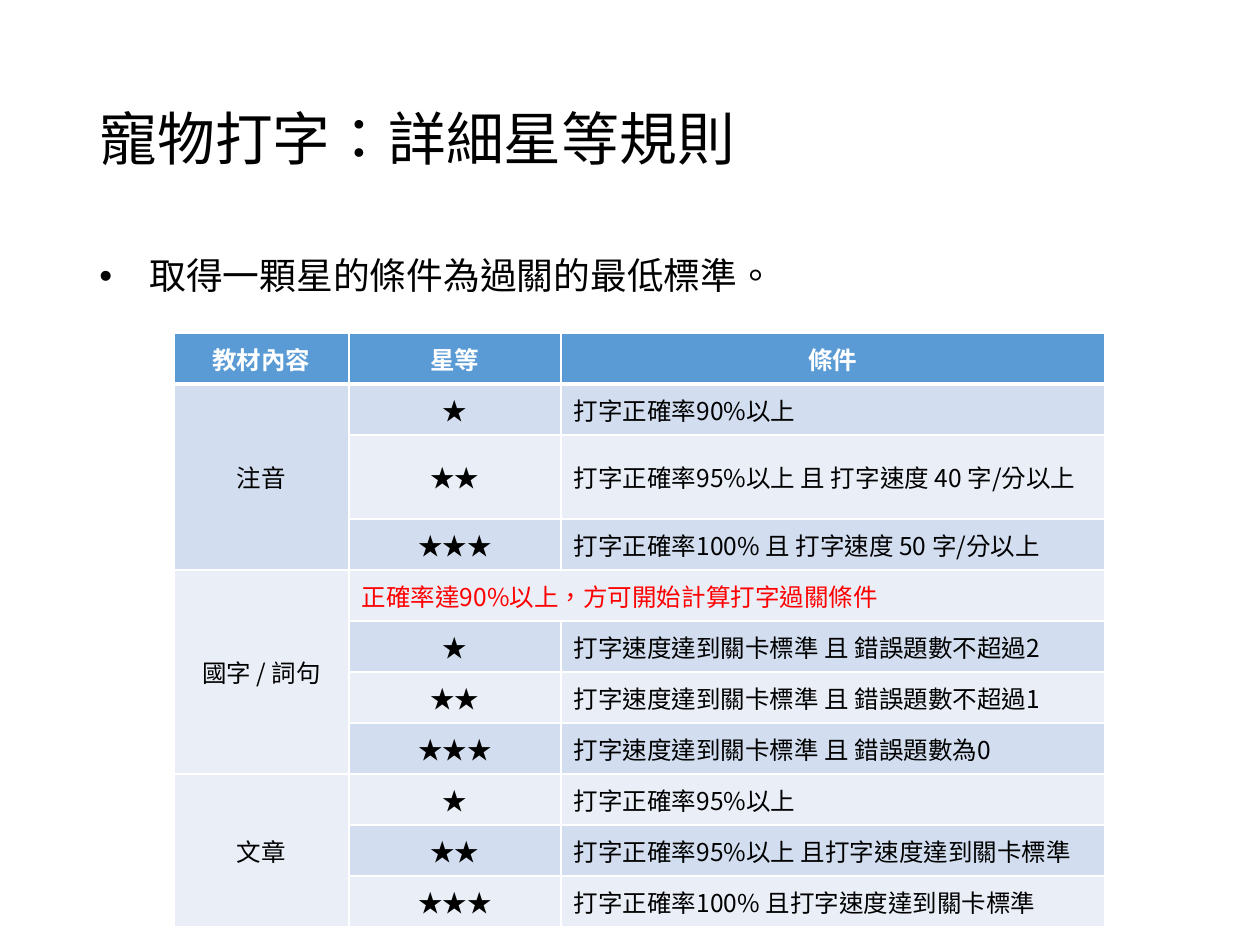
from pptx import Presentation
from pptx.dml.color import RGBColor
from pptx.enum.text import MSO_ANCHOR, MSO_AUTO_SIZE, PP_ALIGN
from pptx.oxml.ns import qn
from pptx.util import Pt
from lxml.etree import SubElement

FONT, LANGUAGE = "Noto Sans CJK SC", "zh-TW"
BLACK, WHITE, RED = "000000", "FFFFFF", "FF0000"
HEADER_FILL, BANDS = "5B9BD5", ("EAEFF7", "D2DEEF")

TITLE = "寵物打字：詳細星等規則"
BULLET = "取得一顆星的條件為過關的最低標準。"
HEADERS = ("教材內容", "星等", "條件")
# (material, note over the two right columns, conditions for one, two and three stars)
GROUPS = [
    ("注音", None, (
        "打字正確率90%以上",
        "打字正確率95%以上 且 打字速度 40 字/分以上",
        "打字正確率100% 且 打字速度 50 字/分以上")),
    ("國字 / 詞句", "正確率達90%以上，方可開始計算打字過關條件", (
        "打字速度達到關卡標準 且 錯誤題數不超過2",
        "打字速度達到關卡標準 且 錯誤題數不超過1",
        "打字速度達到關卡標準 且 錯誤題數為0")),
    ("文章", None, (
        "打字正確率95%以上",
        "打字正確率95%以上 且打字速度達到關卡標準",
        "打字正確率100% 且打字速度達到關卡標準")),
]

TITLE_BOX = (87, 50, 1086, 183)
BODY_BOX = (87, 252, 1086, 600)
TABLE_LEFT, TABLE_TOP = 174, 333
COLUMN_WIDTHS = (175, 212, 544)
ROW_HEIGHT, TWO_LINE_HEIGHT, TWO_LINE_ROW = 51, 84, 2
BULLET_INDENT = 50


def px(value):
    return round(value * 914400 / 126)


def color(hex_string):
    return RGBColor.from_string(hex_string)


def write(text_frame, text, size, hex_color=BLACK, align=PP_ALIGN.LEFT, bold=False):
    text_frame.text = text
    paragraph = text_frame.paragraphs[0]
    paragraph.alignment = align
    for run in paragraph.runs:
        font = run.font
        font.name, font.size, font.bold = FONT, Pt(size), bold
        font.color.rgb = color(hex_color)
        font._element.set("lang", LANGUAGE)
        SubElement(font._element, qn("a:ea"), typeface=FONT)
    return paragraph


def fill_cell(cell, text, hex_color=BLACK, align=PP_ALIGN.CENTER, bold=False):
    cell.vertical_anchor = MSO_ANCHOR.MIDDLE
    write(cell.text_frame, text, 14, hex_color, align, bold)


def underline_cell(cell, points):
    """Give the cell a white bottom border; borders must precede the fill."""
    properties = cell._tc.get_or_add_tcPr()
    line = SubElement(properties, qn("a:lnB"), w=str(Pt(points)))
    fill = SubElement(line, qn("a:solidFill"))
    SubElement(fill, qn("a:srgbClr"), val=WHITE)
    properties.insert(0, line)


def add_title(slide):
    title = slide.shapes.title
    title.left, title.top, title.width, title.height = map(px, TITLE_BOX)
    title.text_frame.auto_size = MSO_AUTO_SIZE.NONE
    title.text_frame.vertical_anchor = MSO_ANCHOR.MIDDLE
    write(title.text_frame, TITLE, 33).line_spacing = 0.9


def add_bullet(slide):
    text_frame = slide.shapes.add_textbox(*map(px, BODY_BOX)).text_frame
    text_frame.word_wrap = True
    paragraph = write(text_frame, BULLET, 21)
    paragraph.line_spacing = 0.9
    properties = paragraph._p.get_or_add_pPr()
    properties.set("marL", str(px(BULLET_INDENT)))
    properties.set("indent", str(-px(BULLET_INDENT)))
    SubElement(properties, qn("a:buFont"), typeface="Arial")
    SubElement(properties, qn("a:buChar"), char="•")


def add_rules_table(slide):
    row_count = 1 + sum(len(rules) + bool(note) for _, note, rules in GROUPS)
    heights = [ROW_HEIGHT] * row_count
    heights[TWO_LINE_ROW] = TWO_LINE_HEIGHT
    table = slide.shapes.add_table(
        row_count, len(HEADERS), px(TABLE_LEFT), px(TABLE_TOP),
        px(sum(COLUMN_WIDTHS)), px(sum(heights))).table
    for column, width in zip(table.columns, COLUMN_WIDTHS):
        column.width = px(width)
    for index, (row, height) in enumerate(zip(table.rows, heights)):
        row.height = px(height)
        for cell in row.cells:
            cell.fill.solid()
            cell.fill.fore_color.rgb = color(BANDS[index % 2] if index else HEADER_FILL)

    for column, header in enumerate(HEADERS):
        fill_cell(table.cell(0, column), header, WHITE, bold=True)
        underline_cell(table.cell(0, column), 3)

    row = 1
    for material, note, rules in GROUPS:
        first = row
        if note:
            table.cell(row, 1).merge(table.cell(row, 2))
            fill_cell(table.cell(row, 1), note, RED, PP_ALIGN.LEFT)
            row += 1
        for stars, rule in enumerate(rules, 1):
            fill_cell(table.cell(row, 1), "★" * stars)
            fill_cell(table.cell(row, 2), rule, align=PP_ALIGN.LEFT)
            row += 1
        table.cell(first, 0).merge(table.cell(row - 1, 0))
        fill_cell(table.cell(first, 0), material)


def main():
    presentation = Presentation()
    presentation.slide_width, presentation.slide_height = px(1260), px(945)
    slide = presentation.slides.add_slide(presentation.slide_layouts[5])
    add_title(slide)
    add_bullet(slide)
    add_rules_table(slide)
    presentation.save("out.pptx")


if __name__ == "__main__":
    main()
